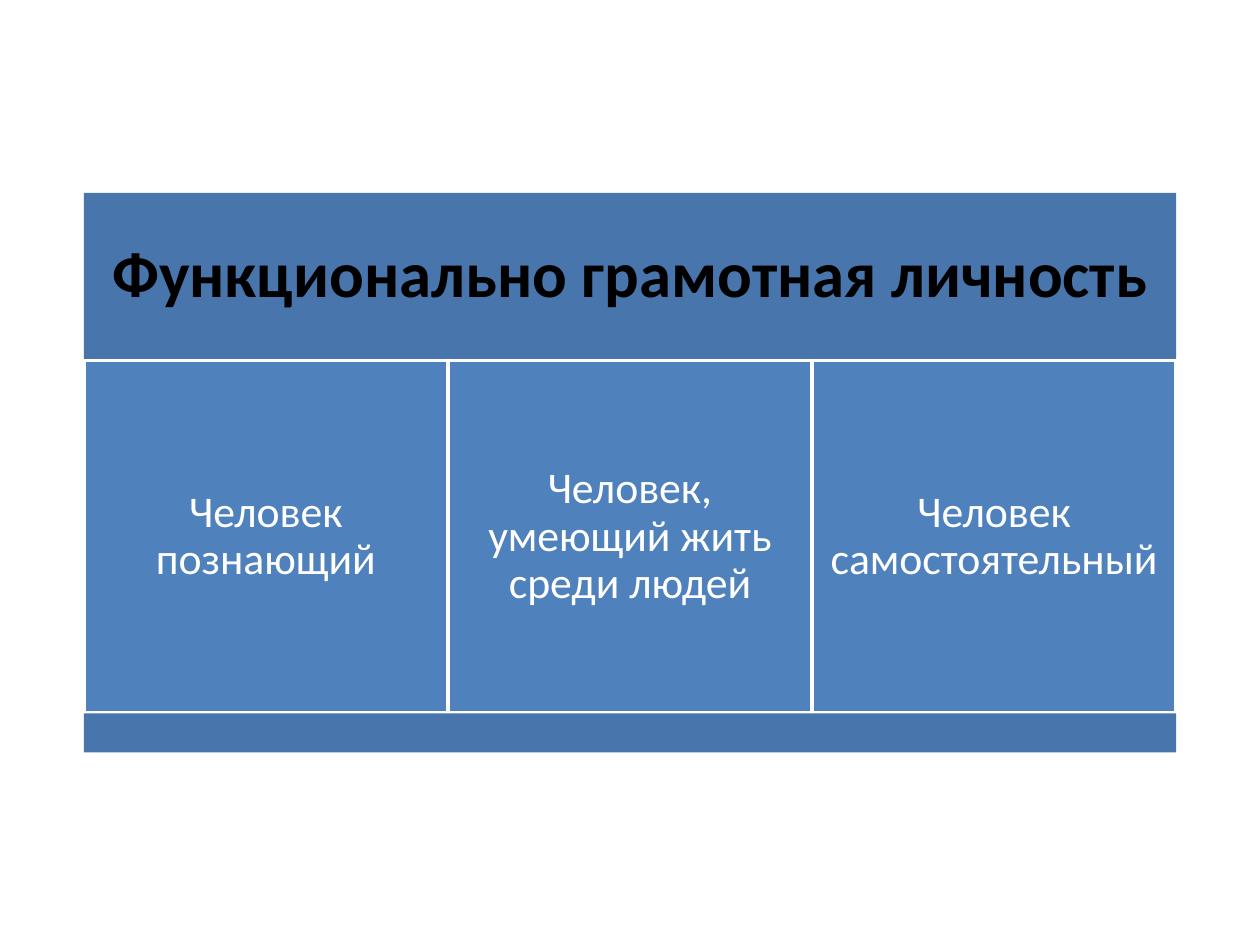
"""Build a slide on the functionally literate person and its three sides."""
from pptx import Presentation
from pptx.dml.color import RGBColor as RGB
from pptx.enum.shapes import MSO_SHAPE as Shape
from pptx.enum.text import MSO_ANCHOR as Anchor, MSO_AUTO_SIZE as Fit, PP_ALIGN as Align
from pptx.util import Cm, Pt

HUES = {"band": "4875AC", "cell": "4F81BD", "white": "FFFFFF", "black": "000000"}
LEFT, WIDTH = 1.69, 22.02
TOP, HEAD, BODY, FOOT = 3.89, 3.38, 7.11, 0.79
SIDES = ["Человек познающий", "Человек, умеющий жить среди людей", "Человек самостоятельный"]


def paint(box, hue, edge=None):
    box.fill.solid()
    box.fill.fore_color.rgb = RGB.from_string(HUES[hue])
    if edge:
        box.line.color.rgb = RGB.from_string(HUES[edge])
        box.line.width = Pt(2)
    else:
        box.line.fill.background()


def write(box, text, size, hue, pad, bold=False):
    frame = box.text_frame
    frame.word_wrap = True
    frame.auto_size = Fit.NONE
    frame.vertical_anchor = Anchor.MIDDLE
    frame.margin_left = frame.margin_right = Cm(pad)
    frame.margin_top = frame.margin_bottom = Cm(pad)
    para = frame.paragraphs[0]
    para.alignment = Align.CENTER
    para.line_spacing = 0.9
    run = para.add_run()
    run.text = text
    run.font.name = "Calibri"
    run.font.size = Pt(size)
    run.font.bold = bold
    run.font.color.rgb = RGB.from_string(HUES[hue])


deck = Presentation()
deck.slide_width, deck.slide_height = Cm(25.4), Cm(19.05)
slide = deck.slides.add_slide(deck.slide_layouts[5])

title = slide.shapes.title
title.left, title.top = Cm(LEFT), Cm(TOP)
title.width, title.height = Cm(WIDTH), Cm(HEAD)
paint(title, "band")
write(title, "Функционально грамотная личность", 37, "black", 0.38, True)

step = WIDTH / len(SIDES)
for i, side in enumerate(SIDES):
    cell = slide.shapes.add_shape(
        Shape.RECTANGLE, Cm(LEFT + i * step), Cm(TOP + HEAD), Cm(step), Cm(BODY))
    cell.shadow.inherit = False
    paint(cell, "cell", "white")
    write(cell, side, 25, "white", 0.25)

foot = slide.shapes.add_shape(
    Shape.RECTANGLE, Cm(LEFT), Cm(TOP + HEAD + BODY), Cm(WIDTH), Cm(FOOT))
foot.shadow.inherit = False
paint(foot, "band")

deck.save("out.pptx")
